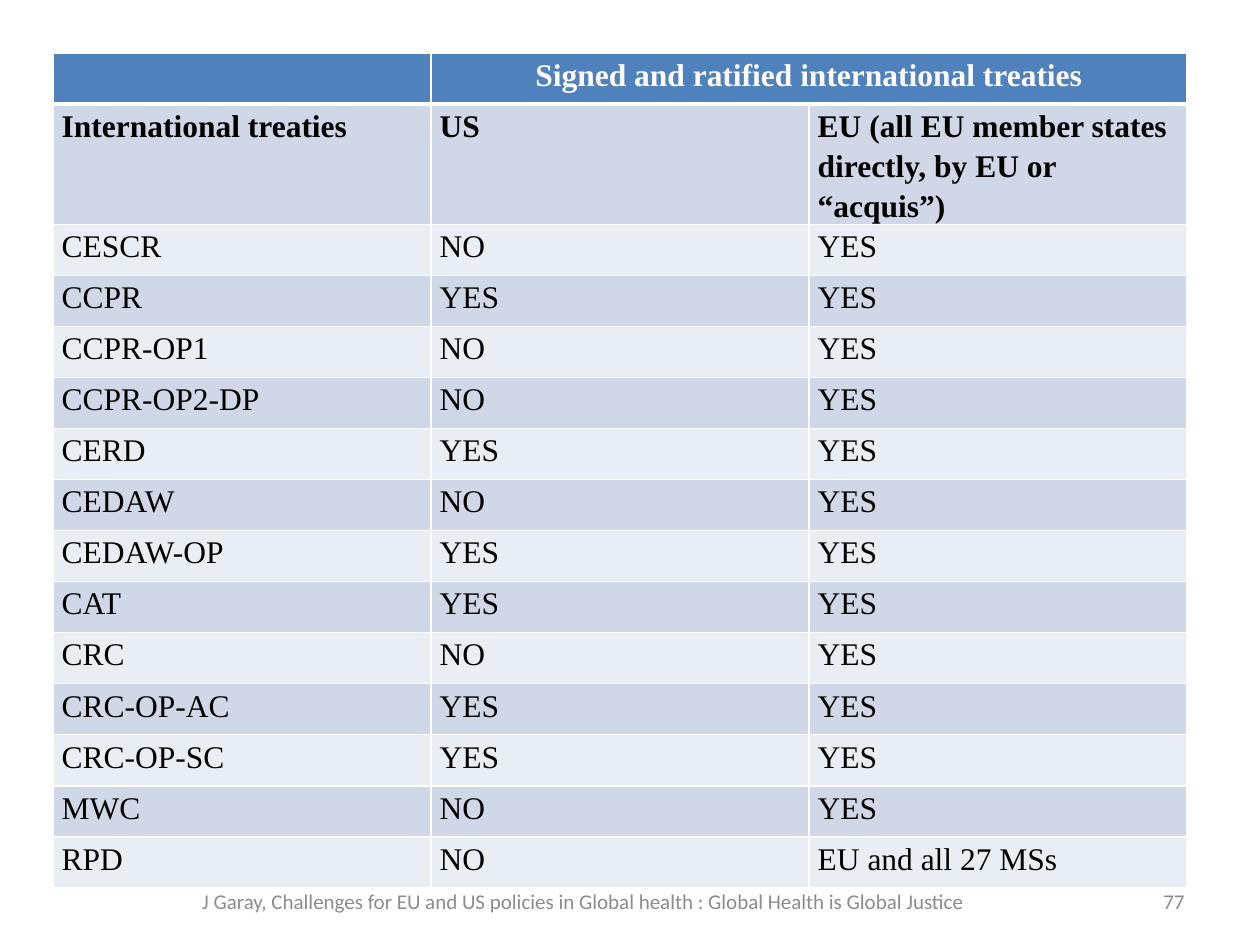
from dataclasses import dataclass

from lxml.etree import SubElement
from pptx import Presentation
from pptx.dml.color import RGBColor
from pptx.enum.text import MSO_ANCHOR, PP_ALIGN
from pptx.oxml.ns import qn
from pptx.util import Inches, Pt


@dataclass(frozen=True)
class Theme:
    header: str = "4F81BD"
    bands: tuple = ("D0D8E8", "E9EDF4")
    white: str = "FFFFFF"
    black: str = "000000"
    grey: str = "8C8C8C"
    table_font: str = "Times New Roman"
    footer_font: str = "Calibri"
    table_size: int = 18
    footer_size: int = 12


THEME = Theme()

TITLE = "Signed and ratified international treaties"
HEADINGS = (
    "International treaties",
    "US",
    "EU (all EU member states directly, by EU or “acquis”)",
)
TREATIES = (
    ("CESCR", "NO", "YES"),
    ("CCPR", "YES", "YES"),
    ("CCPR-OP1", "NO", "YES"),
    ("CCPR-OP2-DP", "NO", "YES"),
    ("CERD", "YES", "YES"),
    ("CEDAW", "NO", "YES"),
    ("CEDAW-OP", "YES", "YES"),
    ("CAT", "YES", "YES"),
    ("CRC", "NO", "YES"),
    ("CRC-OP-AC", "YES", "YES"),
    ("CRC-OP-SC", "YES", "YES"),
    ("MWC", "NO", "YES"),
    ("RPD", "NO", "EU and all 27 MSs"),
)
FOOTER = (
    "J Garay, Challenges for EU and US policies in Global health : "
    "Global Health is Global Justice"
)


def style_font(para, name, size, color, bold=False):
    para.font.name = name
    para.font.size = Pt(size)
    para.font.bold = bold
    para.font.color.rgb = RGBColor.from_string(color)


def set_borders(cell, widths):
    """Draw white borders; widths maps a side (L, R, T, B) to points."""
    properties = cell._tc.get_or_add_tcPr()
    for side, width in widths.items():
        line = SubElement(properties, qn(f"a:ln{side}"), w=str(Pt(width)))
        fill = SubElement(line, qn("a:solidFill"))
        SubElement(fill, qn("a:srgbClr"), val=THEME.white)


def fill_cell(cell, text, row):
    is_header = row == 0
    set_borders(cell, {"L": 1, "R": 1, "T": 3 if row == 1 else 1,
                       "B": 3 if is_header else 1})
    cell.fill.solid()
    color = THEME.header if is_header else THEME.bands[(row - 1) % 2]
    cell.fill.fore_color.rgb = RGBColor.from_string(color)
    cell.margin_left = cell.margin_right = Inches(0.07)
    cell.margin_top = cell.margin_bottom = 0
    cell.text = text
    para = cell.text_frame.paragraphs[0]
    para.alignment = PP_ALIGN.CENTER if is_header else PP_ALIGN.LEFT
    para.line_spacing = 1.15
    para.space_after = Pt(10)
    style_font(para, THEME.table_font, THEME.table_size,
               THEME.white if is_header else THEME.black, bold=row < 2)


def add_treaty_table(page, left, top, width, height):
    rows = (("", TITLE, ""), HEADINGS, *TREATIES)
    table = page.shapes.add_table(
        len(rows), len(HEADINGS), left, top, width, height).table
    for row, texts in enumerate(rows):
        for column, text in enumerate(texts):
            fill_cell(table.cell(row, column), text, row)
    table.cell(0, 1).merge(table.cell(0, 2))


def add_footer_text(page, text, alignment, left, top, width, height):
    box = page.shapes.add_textbox(left, top, width, height)
    frame = box.text_frame
    frame.word_wrap = True
    frame.vertical_anchor = MSO_ANCHOR.MIDDLE
    para = frame.paragraphs[0]
    para.text = text
    para.alignment = alignment
    style_font(para, THEME.footer_font, THEME.footer_size, THEME.grey)


def main():
    deck = Presentation()
    deck.slide_width, deck.slide_height = Inches(10), Inches(7.5)
    page = deck.slides.add_slide(deck.slide_layouts[6])

    # Treaty comparison; the headings row grows to fit its text
    add_treaty_table(page, Inches(0.42), Inches(0.42), Inches(9), Inches(6.08))

    # Footer and page number
    top, height = Inches(6.95), Inches(0.4)
    add_footer_text(page, FOOTER, PP_ALIGN.CENTER,
                    Inches(1.17), top, Inches(6.92), height)
    add_footer_text(page, "77", PP_ALIGN.RIGHT,
                    Inches(7.17), top, Inches(2.33), height)

    deck.save("out.pptx")


if __name__ == "__main__":
    main()
